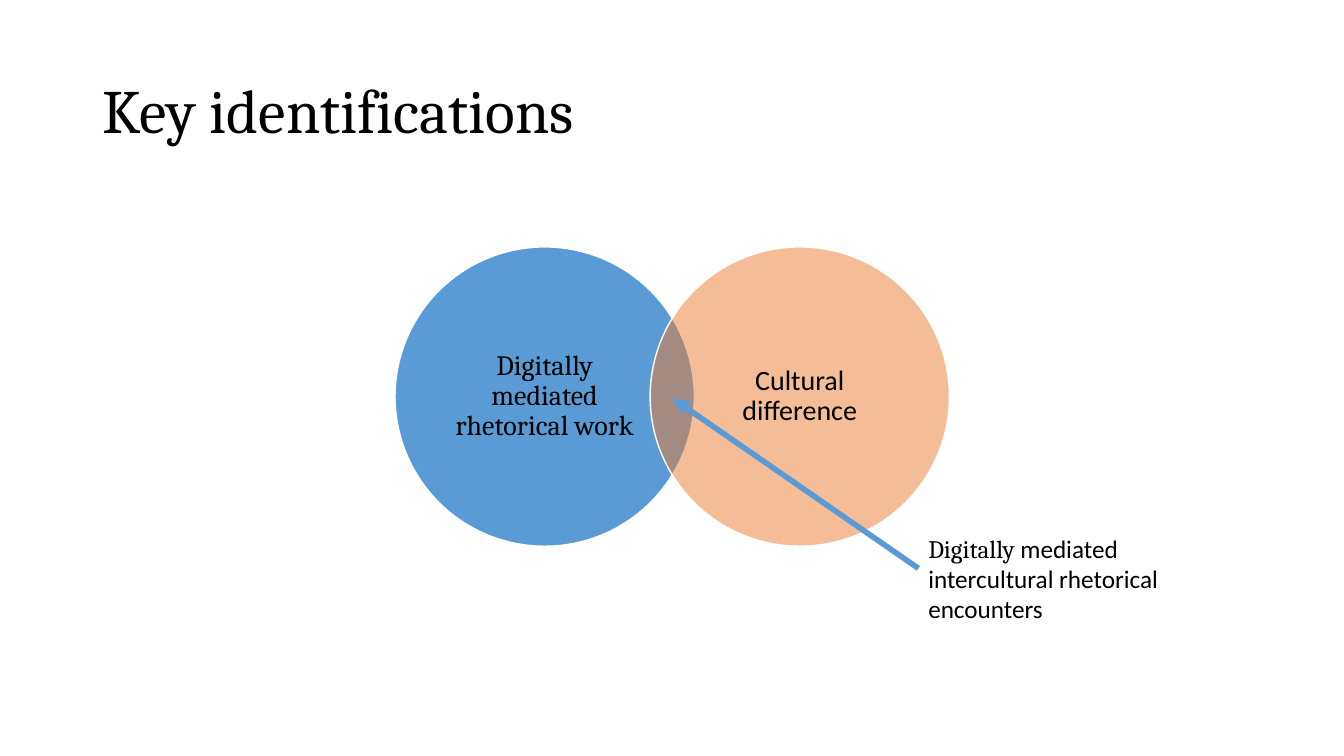
"""Build a slide with two overlapping circles and a labelled overlap."""
from dataclasses import dataclass

from pptx import Presentation
from pptx import util as u
from pptx.dml.color import RGBColor
from pptx.enum import shapes, text
from pptx.oxml import ns
from lxml import etree


@dataclass(frozen=True)
class Theme:
    """Colours, fonts and type sizes of the slide."""
    ink: str = "000000"
    blue: str = "5B9BD5"
    orange: str = "ED7D31"
    outline: str = "FFFFFF"
    serif: str = "Cambria"
    sans: str = "Calibri"
    title_size: float = 44
    circle_size: float = 20
    label_size: float = 18


class SlideBuilder:
    """Draw styled elements on the current slide."""

    def __init__(self, slide, theme):
        """Keep the slide and its theme."""
        self.slide = slide
        self.theme = theme

    def apply(self, target, formats):
        """Set each format value on the target."""
        for name, value in formats.items():
            setattr(target, name, value)

    def fill_text(self, shape, runs, size, frame_format, paragraph_format):
        """Fill a shape with one paragraph of (wording, font) runs."""
        self.apply(shape.text_frame, {"word_wrap": True, **frame_format})
        paragraph = shape.text_frame.paragraphs[0]
        self.apply(paragraph, paragraph_format)
        for wording, font_name in runs:
            run = paragraph.add_run()
            run.text = wording
            self.apply(run.font, {"name": font_name, "size": u.Pt(size)})
            run.font.color.rgb = RGBColor.from_string(self.theme.ink)

    def title(self, wording, left, top, width, height):
        """Place and format the title placeholder."""
        shape = self.slide.shapes.title
        box = dict(left=left, top=top, width=width, height=height)
        self.apply(shape, {name: u.Pt(value) for name, value in box.items()})
        self.fill_text(shape, [(wording, self.theme.serif)], self.theme.title_size,
                       {"vertical_anchor": text.MSO_ANCHOR.MIDDLE,
                        "auto_size": text.MSO_AUTO_SIZE.NONE},
                       {"alignment": text.PP_ALIGN.LEFT, "line_spacing": 0.9})

    def circle(self, wording, font_name, left, top, diameter, colour, opacity):
        """Add a circle with centred text."""
        shape = self.slide.shapes.add_shape(
            shapes.MSO_SHAPE.OVAL, u.Pt(left), u.Pt(top), u.Pt(diameter), u.Pt(diameter))
        shape.shadow.inherit = False
        shape.fill.solid()
        shape.fill.fore_color.rgb = RGBColor.from_string(colour)
        if opacity < 100:
            fill_colour = shape._element.spPr.find(
                ns.qn("a:solidFill") + "/" + ns.qn("a:srgbClr"))
            etree.SubElement(fill_colour, ns.qn("a:alpha"), val=str(opacity * 1000))
        shape.line.color.rgb = RGBColor.from_string(self.theme.outline)
        shape.line.width = u.Pt(1)
        margins = {f"margin_{side}": u.Pt(6) for side in ("left", "top", "right", "bottom")}
        self.fill_text(shape, [(wording, font_name)], self.theme.circle_size,
                       {"vertical_anchor": text.MSO_ANCHOR.MIDDLE, **margins},
                       {"alignment": text.PP_ALIGN.CENTER, "line_spacing": 0.9})

    def arrow(self, start, end):
        """Add an arrow pointing at its end."""
        points = [u.Pt(value) for value in (*start, *end)]
        connector = self.slide.shapes.add_connector(shapes.MSO_CONNECTOR.STRAIGHT, *points)
        connector.line.color.rgb = RGBColor.from_string(self.theme.blue)
        connector.line.width = u.Pt(4)
        properties = connector._element.spPr
        etree.SubElement(properties.find(ns.qn("a:ln")), ns.qn("a:tailEnd"), type="triangle")
        etree.SubElement(properties, ns.qn("a:effectLst"))

    def label(self, runs, left, top, width, height):
        """Add a text box that grows with its wording."""
        shape = self.slide.shapes.add_textbox(u.Pt(left), u.Pt(top), u.Pt(width), u.Pt(height))
        self.fill_text(shape, runs, self.theme.label_size,
                       {"auto_size": text.MSO_AUTO_SIZE.SHAPE_TO_FIT_TEXT}, {})


def main():
    """Build and save the slide."""
    presentation = Presentation()
    presentation.slide_width, presentation.slide_height = u.Pt(960), u.Pt(540)
    slide = presentation.slides.add_slide(presentation.slide_layouts[5])
    theme = Theme()
    builder = SlideBuilder(slide, theme)
    builder.title("Key identifications", 66, 28.8, 828, 104.4)

    circles = [("Digitally mediated rhetorical work", theme.serif, theme.blue, 100),
               ("Cultural difference", theme.sans, theme.orange, 50)]
    for index, (wording, font_name, colour, opacity) in enumerate(circles):
        builder.circle(wording, font_name, 282.2 + index * 182.2, 176.4, 213.8,
                       colour, opacity)

    builder.arrow((656, 406), (480.2, 284.4))
    builder.label([("Digitally ", theme.serif),
                   ("mediated intercultural rhetorical encounters", theme.sans)],
                  656, 377.3, 204.5, 75.6)
    presentation.save("out.pptx")


if __name__ == "__main__":
    main()
